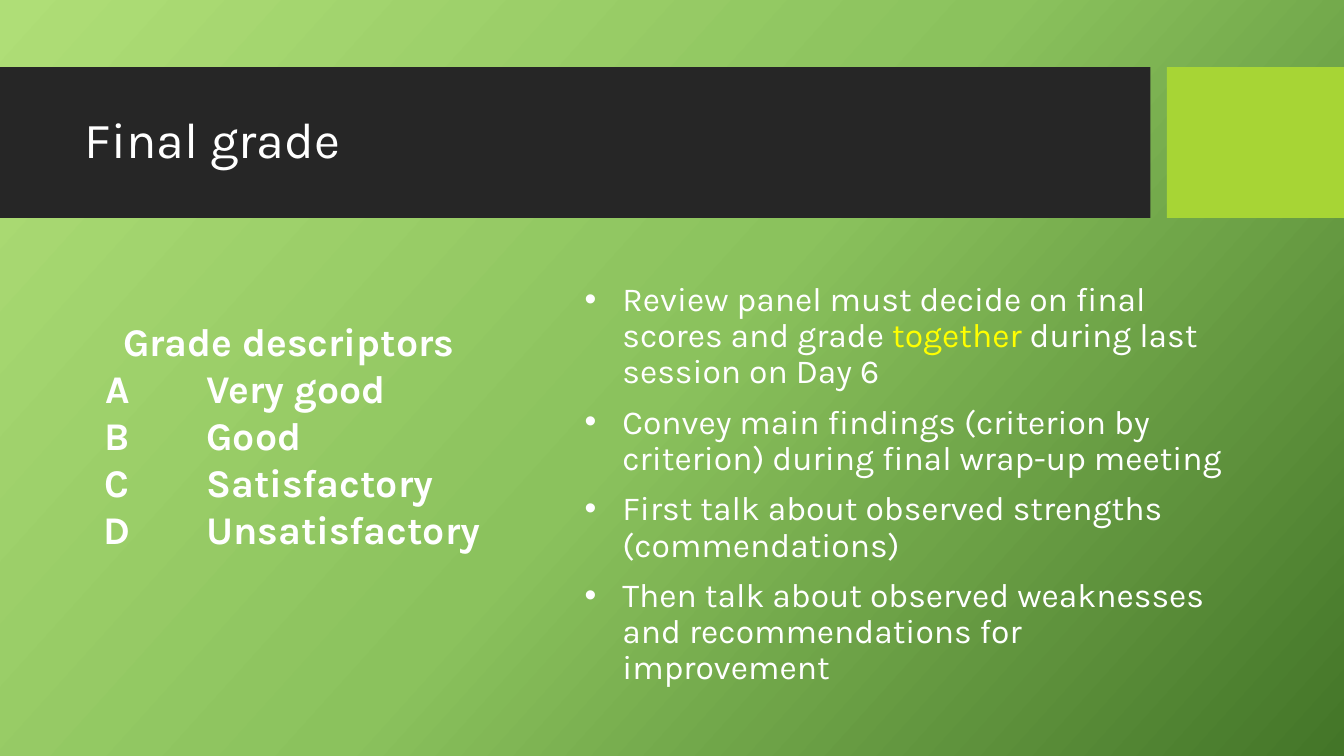
from lxml import etree
from pptx import Presentation
from pptx.dml.color import RGBColor
from pptx.enum.shapes import MSO_SHAPE
from pptx.enum.text import MSO_ANCHOR, PP_ALIGN
from pptx.oxml.ns import qn
from pptx.util import Pt

RECTANGLE = MSO_SHAPE.RECTANGLE
MIDDLE, BOTTOM = MSO_ANCHOR.MIDDLE, MSO_ANCHOR.BOTTOM
LEFT, CENTER = PP_ALIGN.LEFT, PP_ALIGN.CENTER
FONT = "Karla"
COLORS = {
    "light": "AFDE77", "mid": "8BC25D", "deep": "437528",
    "band": "262626", "accent": "A7D535", "text": "FFFFFF", "mark": "FFFF00",
}
GRADES = [("A", "Very good"), ("B", "Good"), ("C", "Satisfactory"), ("D", "Unsatisfactory")]
GUIDANCE = [
    [("Review panel must decide on final scores and grade ", "text"),
     ("together", "mark"), (" during last session on Day 6", "text")],
    [("Convey main findings (criterion by criterion) during final wrap-up meeting", "text")],
    [("First talk about observed strengths (commendations)", "text")],
    [("Then talk about observed weaknesses and recommendations for improvement", "text")],
]


class SlideBuilder:
    """Draws styled elements on one slide, with lengths in points."""

    def __init__(self, slide):
        self.slide = slide

    def background(self, color_names, angle):
        fill = self.slide.background.fill
        fill.gradient()
        fill.gradient_angle = 360 - angle
        stops = self.slide.background._cSld.find(".//" + qn("a:gsLst"))
        for stop in list(stops):
            stops.remove(stop)
        for index, name in enumerate(color_names):
            position = 100000 * index // (len(color_names) - 1)
            stop = etree.SubElement(stops, qn("a:gs"), pos=str(position))
            etree.SubElement(stop, qn("a:srgbClr"), val=COLORS[name])

    def block(self, left, top, width, height, color):
        block = self.slide.shapes.add_shape(
            RECTANGLE, Pt(left), Pt(top), Pt(width), Pt(height))
        block.shadow.inherit = False
        block.fill.solid()
        block.fill.fore_color.rgb = RGBColor.from_string(COLORS[color])
        block.line.fill.background()

    def run(self, paragraph, words, size, color="text", bold=False):
        run = paragraph.add_run()
        run.text = words
        run.font.name = FONT
        run.font.size = Pt(size)
        run.font.bold = bold
        run.font.color.rgb = RGBColor.from_string(COLORS[color])

    def text(self, left, top, width, height, paragraphs, size, bulleted=False):
        frame = self.slide.shapes.add_textbox(
            Pt(left), Pt(top), Pt(width), Pt(height)).text_frame
        frame.word_wrap = True
        frame.vertical_anchor = MIDDLE
        for index, runs in enumerate(paragraphs):
            paragraph = frame.add_paragraph() if index else frame.paragraphs[0]
            paragraph.line_spacing = 0.9
            if index:
                paragraph.space_before = Pt(10)
            if bulleted:
                properties = paragraph._p.get_or_add_pPr()
                properties.set("marL", str(Pt(27)))
                properties.set("indent", str(-Pt(27)))
                etree.SubElement(properties, qn("a:buFont"), typeface="Arial")
                etree.SubElement(properties, qn("a:buChar"), char="•")
            for words, color in runs:
                self.run(paragraph, words, size, color)

    def cell(self, cell, words, align, size):
        cell.margin_left = cell.margin_right = cell.margin_top = cell.margin_bottom = 0
        cell.vertical_anchor = BOTTOM
        properties = cell._tc.get_or_add_tcPr()
        for side in ("lnL", "lnR", "lnT", "lnB"):
            border = etree.SubElement(properties, qn("a:" + side), w="0")
            etree.SubElement(border, qn("a:noFill"))
        cell.fill.background()
        if words:
            paragraph = cell.text_frame.paragraphs[0]
            paragraph.alignment = align
            self.run(paragraph, words, size, bold=True)

    def table(self, left, top, widths, heights, rows, size):
        table = self.slide.shapes.add_table(
            len(rows), len(widths), Pt(left), Pt(top),
            Pt(sum(widths)), Pt(sum(heights))).table
        table.first_row = table.horz_banding = False
        for column, width in zip(table.columns, widths):
            column.width = Pt(width)
        for row, height in zip(table.rows, heights):
            row.height = Pt(height)
        for row, (grade, meaning) in enumerate(rows):
            self.cell(table.cell(row, 0), grade, CENTER, size)
            self.cell(table.cell(row, 1), meaning, LEFT, size)
        table.cell(0, 0).merge(table.cell(0, 1))


def main():
    presentation = Presentation()
    presentation.slide_width, presentation.slide_height = Pt(960), Pt(540)
    builder = SlideBuilder(presentation.slides.add_slide(presentation.slide_layouts[6]))
    builder.background(["light", "mid", "deep"], 42)
    builder.block(0, 48, 821.75, 107.75, "band")
    builder.block(833.5, 48, 126.5, 107.75, "accent")
    builder.text(53.5, 59, 756.5, 85, [[("Final grade", "text")]], 36)
    builder.table(20, 227.5, [127.5, 245], [34] + [16.5] * len(GRADES),
                  [("Grade descriptors", "")] + GRADES, 28)
    builder.text(410.5, 182, 474, 328.5, GUIDANCE, 24, bulleted=True)
    presentation.save("out.pptx")


if __name__ == "__main__":
    main()
